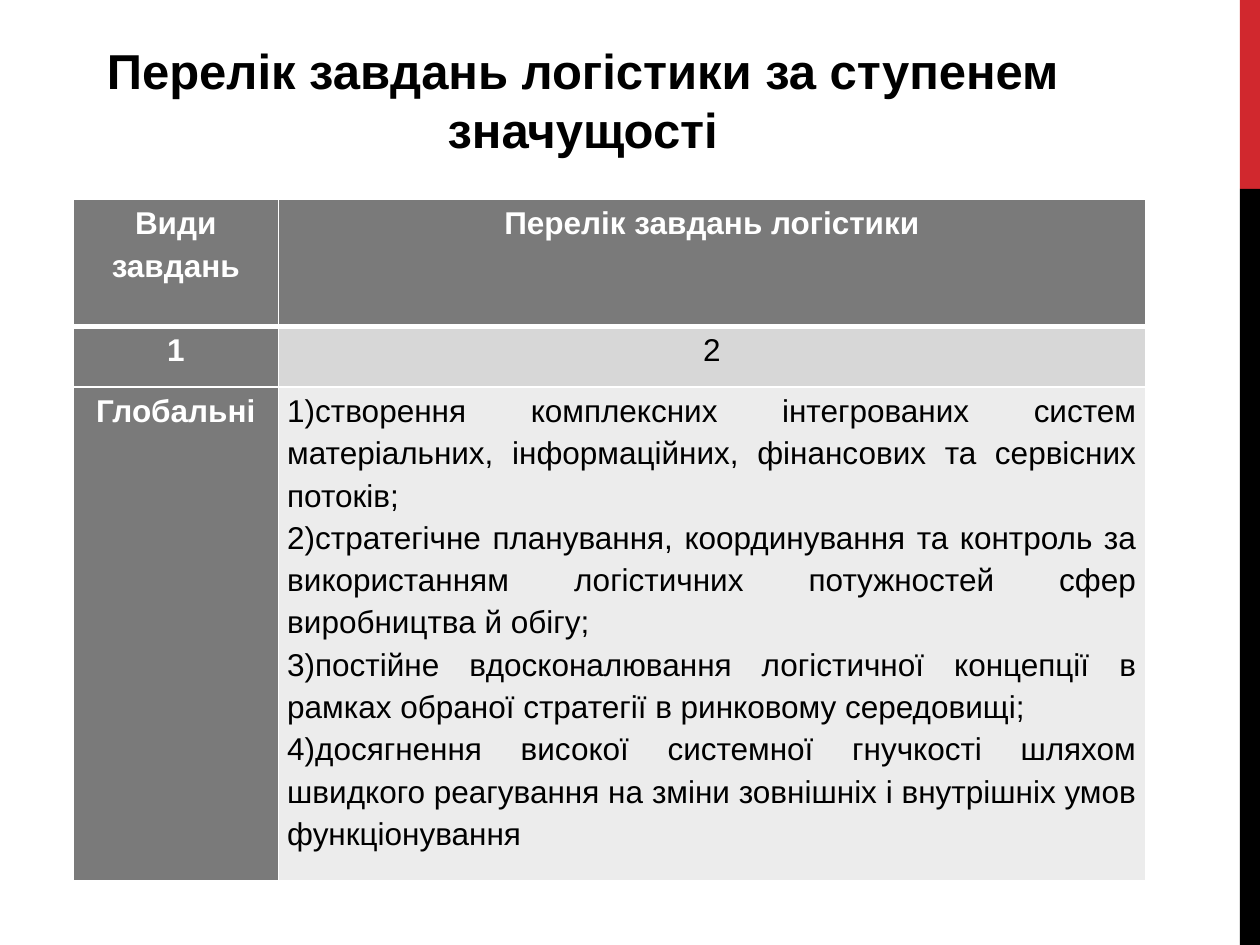
from lxml import etree
from pptx import Presentation
from pptx.dml.color import RGBColor
from pptx.enum.shapes import MSO_SHAPE
from pptx.enum.text import MSO_ANCHOR, MSO_AUTO_SIZE, PP_ALIGN
from pptx.oxml.ns import qn
from pptx.util import Inches, Pt

CENTER, JUSTIFY = PP_ALIGN.CENTER, PP_ALIGN.JUSTIFY
MIDDLE, TOP = MSO_ANCHOR.MIDDLE, MSO_ANCHOR.TOP
RECT = MSO_SHAPE.RECTANGLE
FONT = "Arial"
WHITE, BLACK, RED = "FFFFFF", "000000", "D1282E"
DARK, MID, LIGHT = "7A7A7A", "D7D7D7", "ECECEC"

TITLE = "Перелік завдань логістики за ступенем значущості"
TASKS = [
    "1)створення комплексних інтегрованих систем матеріальних, інформаційних, "
    "фінансових та сервісних потоків;",
    "2)стратегічне планування, координування та контроль за використанням "
    "логістичних потужностей сфер виробництва й обігу;",
    "3)постійне вдосконалювання логістичної концепції в рамках обраної стратегії "
    "в ринковому середовищі;",
    "4)досягнення високої системної гнучкості шляхом швидкого реагування на зміни "
    "зовнішніх і внутрішніх умов функціонування",
]
ROWS = [
    (["Види завдань"], ["Перелік завдань логістики"]),
    (["1"], ["2"]),
    (["Глобальні"], TASKS),
]
BODY_FILLS = [DARK, MID, LIGHT]
COL_WIDTHS = [1.63, 6.88]
ROW_HEIGHTS = [1.01, 0.48, 3.92]
STRIPES = [(0, 1.5, RED), (1.5, 6, BLACK)]


def rgb(value):
    return RGBColor.from_string(value)


def add_text(p, text, size, color, bold, align):
    p.alignment = align
    r = p.add_run()
    r.text = text
    r.font.name = FONT
    r.font.size = Pt(size)
    r.font.bold = bold
    r.font.color.rgb = rgb(color)


def set_borders(cell, bottom, top):
    """Draw white borders; bottom and top are widths in points."""
    tc_pr = cell._tc.get_or_add_tcPr()
    for side, width in (("L", 1), ("R", 1), ("T", top), ("B", bottom)):
        ln = etree.SubElement(tc_pr, qn(f"a:ln{side}"), w=str(Pt(width)))
        fill = etree.SubElement(ln, qn("a:solidFill"))
        etree.SubElement(fill, qn("a:srgbClr"), val=WHITE)


def fill_cell(cell, row, col, paragraphs):
    dark = row == 0 or col == 0
    set_borders(cell, bottom=3 if row == 0 else 1, top=3 if row == 1 else 1)
    cell.fill.solid()
    cell.fill.fore_color.rgb = rgb(DARK if dark else BODY_FILLS[row])
    cell.margin_left = cell.margin_right = Inches(0.07)
    cell.margin_top = cell.margin_bottom = 0
    cell.vertical_anchor = TOP
    tf = cell.text_frame
    for i, text in enumerate(paragraphs):
        p = tf.add_paragraph() if i else tf.paragraphs[0]
        p.line_spacing = 1.2
        add_text(p, text, 18, WHITE if dark else BLACK, dark,
                 JUSTIFY if len(paragraphs) > 1 else CENTER)


prs = Presentation()
prs.slide_width, prs.slide_height = Inches(10), Inches(7.5)
s = prs.slides.add_slide(prs.slide_layouts[5])

for top, height, color in STRIPES:
    sp = s.shapes.add_shape(RECT, Inches(9.84), Inches(top), Inches(0.16), Inches(height))
    sp.shadow.inherit = False
    sp.fill.solid()
    sp.fill.fore_color.rgb = rgb(color)
    sp.line.fill.background()

title = s.shapes.title
title.left, title.top = Inches(0.25), Inches(0)
title.width, title.height = Inches(8.75), Inches(1.58)
tf = title.text_frame
tf.word_wrap = True
tf.auto_size = MSO_AUTO_SIZE.NONE
tf.vertical_anchor = MIDDLE
add_text(tf.paragraphs[0], TITLE, 28, BLACK, True, CENTER)

table = s.shapes.add_table(
    len(ROWS), len(COL_WIDTHS), Inches(0.58), Inches(1.58),
    Inches(sum(COL_WIDTHS)), Inches(sum(ROW_HEIGHTS))).table
for column, width in zip(table.columns, COL_WIDTHS):
    column.width = Inches(width)
for i, (cells, height) in enumerate(zip(ROWS, ROW_HEIGHTS)):
    table.rows[i].height = Inches(height)
    for j, paragraphs in enumerate(cells):
        fill_cell(table.cell(i, j), i, j, paragraphs)

prs.save("out.pptx")
